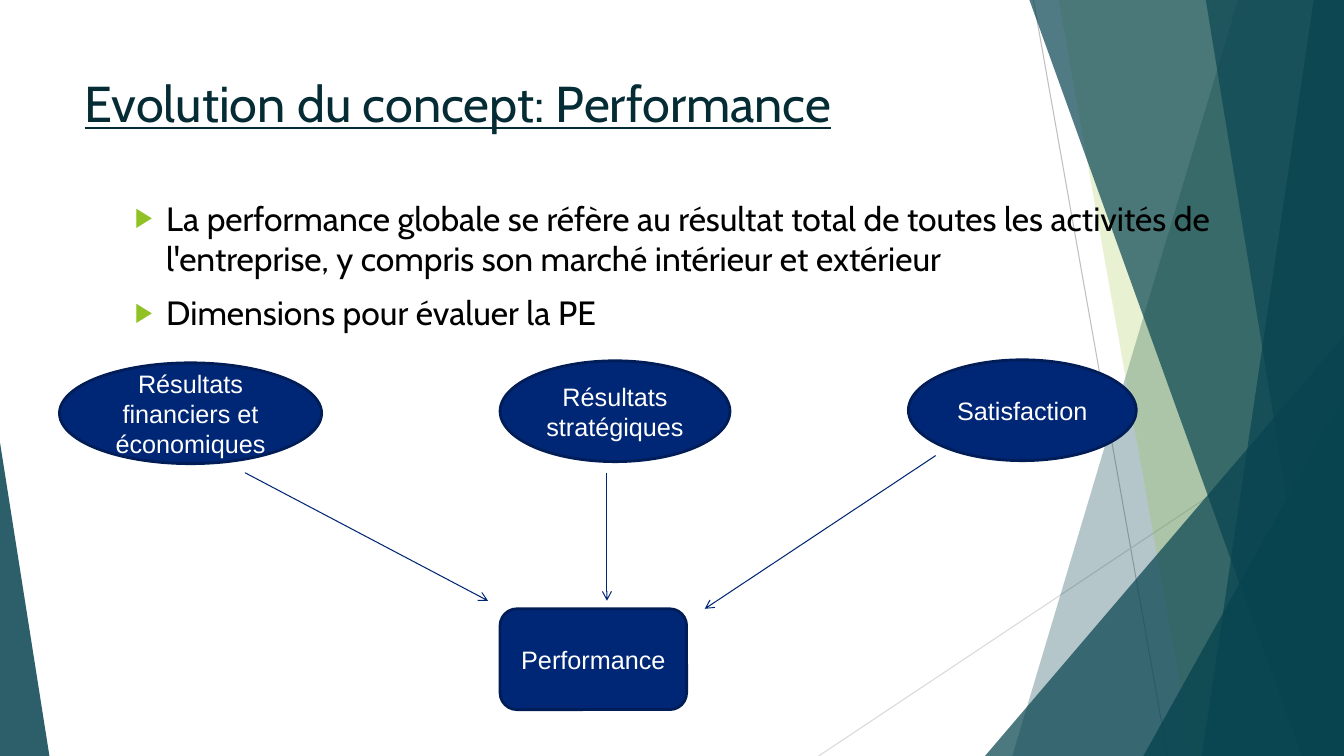
from pptx import Presentation
from pptx.dml.color import RGBColor
from pptx.enum.shapes import MSO_CONNECTOR, MSO_SHAPE
from pptx.enum.text import MSO_ANCHOR, PP_ALIGN
from pptx.oxml.ns import qn
from pptx.util import Inches, Pt
from lxml.etree import SubElement

WIDTH, HEIGHT = 13.33, 7.5
COLORS = {
    "title": "052C34", "text": "000000", "white": "FFFFFF",
    "teal": "084450", "green": "90C226",
    "navy": "002776", "outline": "001D57", "arrow": "002673",
    "gray": "BFBFBF", "light_gray": "D9D9D9",
}


class SlideBuilder:
    def __init__(self, presentation):
        self.slide = presentation.slides.add_slide(presentation.slide_layouts[5])
        self.shapes = self.slide.shapes

    def color(self, name):
        return RGBColor.from_string(COLORS[name])

    def style(self, paragraph, font_name, size, color, underline=None):
        for run in paragraph.runs:
            run.font.name = font_name
            run.font.size = Pt(size)
            run.font.color.rgb = self.color(color)
            run.font.underline = underline

    def glass(self, shape, color, opacity):
        shape.shadow.inherit = False
        shape.line.fill.background()
        shape.fill.solid()
        shape.fill.fore_color.rgb = self.color(color)
        color_element = shape.fill._xPr.find(qn("a:solidFill"))[0]
        SubElement(color_element, qn("a:alpha"), val=str(opacity * 1000))

    def band(self, top_x, bottom_x, color, opacity):
        """Full-height band from a slanted left edge to the right slide edge."""
        builder = self.shapes.build_freeform(Inches(top_x), 0)
        corners = [(WIDTH, 0), (WIDTH, HEIGHT), (bottom_x, HEIGHT)]
        builder.add_line_segments([(Inches(x), Inches(y)) for x, y in corners])
        self.glass(builder.convert_to_shape(), color, opacity)

    def corner(self, left, top, width, apex, opacity):
        """Right triangle standing on the bottom edge of the slide."""
        shape = self.shapes.add_shape(
            MSO_SHAPE.ISOSCELES_TRIANGLE, Inches(left), Inches(top),
            Inches(width), Inches(HEIGHT - top))
        shape.adjustments[0] = apex
        self.glass(shape, "teal", opacity)

    def line(self, start, end, color, arrow=False):
        connector = self.shapes.add_connector(
            MSO_CONNECTOR.STRAIGHT, *map(Inches, start + end))
        connector.line.color.rgb = self.color(color)
        connector.line.width = Pt(0.75)
        if arrow:
            SubElement(connector.line._get_or_add_ln(), qn("a:tailEnd"), type="arrow")
        SubElement(connector._element.spPr, qn("a:effectLst"))

    def title(self, text, left, top, width, height):
        title = self.shapes.title
        title.left, title.top, title.width, title.height = map(
            Inches, (left, top, width, height))
        frame = title.text_frame
        frame.text = text
        frame.vertical_anchor = MSO_ANCHOR.TOP
        frame.paragraphs[0].alignment = PP_ALIGN.LEFT
        self.style(frame.paragraphs[0], "Cabin", 36, "title", underline=True)

    def bullets(self, items, left, top, width, height):
        box = self.shapes.add_textbox(*map(Inches, (left, top, width, height)))
        frame = box.text_frame
        frame.word_wrap = True
        frame.text = "\n".join(items)
        for paragraph in frame.paragraphs:
            paragraph.space_before = Pt(10)
            self.style(paragraph, "Cabin", 24, "text")
            properties = paragraph._p.get_or_add_pPr()
            properties.set("marL", str(Inches(0.81)))
            properties.set("indent", str(Inches(-0.31)))
            bullet_color = SubElement(properties, qn("a:buClr"))
            SubElement(bullet_color, qn("a:srgbClr"), val=COLORS["green"])
            SubElement(properties, qn("a:buSzPct"), val="80000")
            SubElement(properties, qn("a:buFont"), typeface="Arial")
            SubElement(properties, qn("a:buChar"), char="▶")

    def node(self, text, kind, left, top, width):
        shape = self.shapes.add_shape(
            kind, Inches(left), Inches(top), Inches(width), Inches(1))
        shape.shadow.inherit = False
        shape.fill.solid()
        shape.fill.fore_color.rgb = self.color("navy")
        shape.line.color.rgb = self.color("outline")
        shape.line.width = Pt(2)
        frame = shape.text_frame
        frame.text = text
        frame.word_wrap = True
        frame.vertical_anchor = MSO_ANCHOR.MIDDLE
        frame.paragraphs[0].alignment = PP_ALIGN.CENTER
        self.style(frame.paragraphs[0], "Arial", 18, "white")


def main():
    presentation = Presentation()
    presentation.slide_width = Inches(WIDTH)
    presentation.slide_height = Inches(HEIGHT)
    builder = SlideBuilder(presentation)

    # Background decoration
    builder.line((10.25, 0), (11.58, HEIGHT), "gray")
    builder.line((WIDTH, 4.03), (8.12, HEIGHT), "light_gray")
    builder.band(12.28, 10.04, "teal", 30)
    builder.band(10.5, 11.83, "green", 20)
    builder.corner(9.77, 3.33, 3.56, 1, 72)
    for top_x, bottom_x, opacity in [(10.21, 12.91, 70), (13.03, 11.92, 70),
                                     (11.96, 13.18, 65)]:
        builder.band(top_x, bottom_x, "teal", opacity)
    builder.corner(11.34, 3.93, 1.99, 1, 80)
    builder.corner(0, 4.39, 0.49, 0, 85)

    # Title and bullets
    builder.title("Evolution du concept: Performance", 0.74, 0.67, 9.4, 0.91)
    builder.bullets([
        "La performance globale se réfère au résultat total de toutes les "
        "activités de l'entreprise, y compris son marché intérieur et extérieur",
        "Dimensions pour évaluer la PE",
    ], 0.74, 1.91, 12.02, 5.32)

    # Dimensions leading to performance
    for text, left, top, width in [
        ("Résultats financiers et économiques", 0.59, 3.6, 2.6),
        ("Résultats stratégiques", 4.96, 3.58, 2.28),
        ("Satisfaction", 9.01, 3.57, 2.26),
    ]:
        builder.node(text, MSO_SHAPE.OVAL, left, top, width)
    builder.node("Performance", MSO_SHAPE.ROUNDED_RECTANGLE, 4.96, 6.04, 1.85)

    # Arrows
    for start, end in [((9.28, 4.52), (6.99, 6.04)),
                       ((6.02, 4.69), (6.02, 5.96)),
                       ((2.43, 4.69), (4.84, 5.96))]:
        builder.line(start, end, "arrow", arrow=True)

    presentation.save("out.pptx")


if __name__ == "__main__":
    main()
